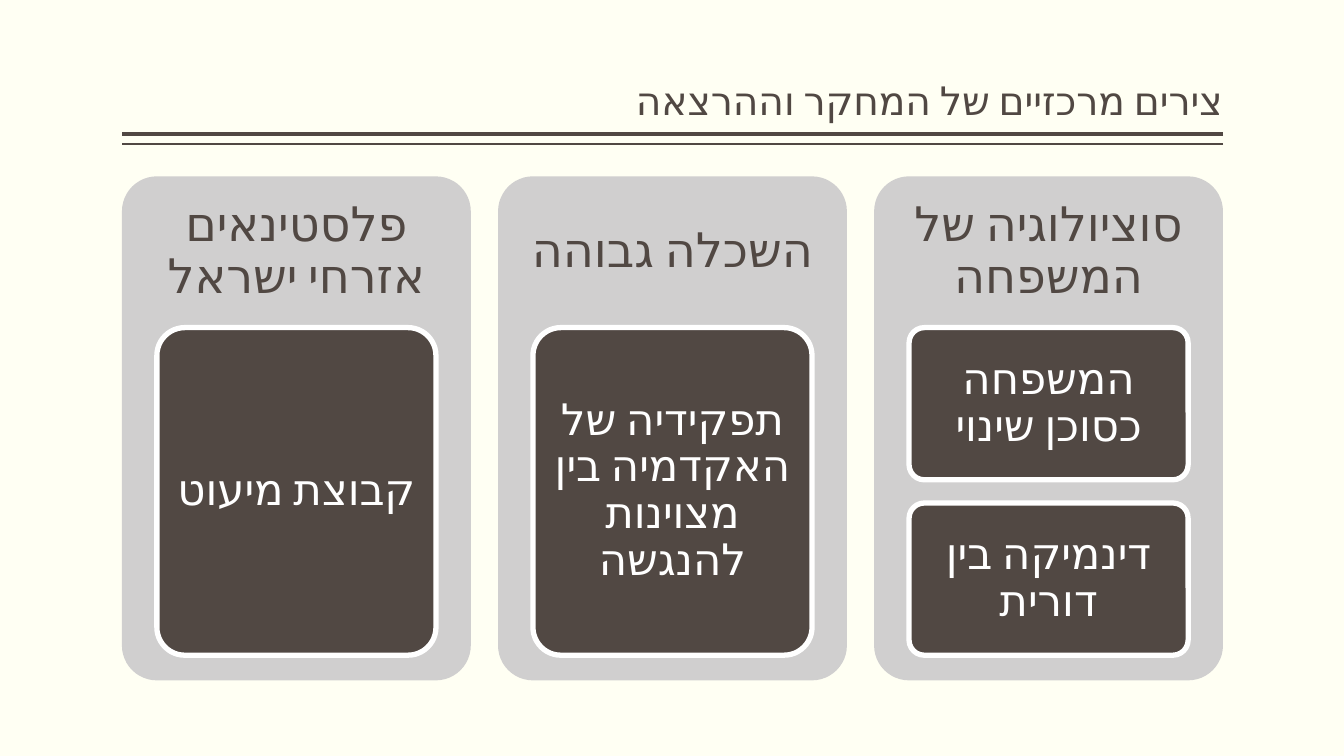
"""Build a slide with three right-to-left topic columns."""
from lxml.etree import SubElement
from pptx import Presentation
from pptx.dml.color import RGBColor
from pptx.enum.shapes import MSO_CONNECTOR, MSO_SHAPE
from pptx.enum.text import MSO_ANCHOR, MSO_AUTO_SIZE, PP_ALIGN
from pptx.oxml.ns import qn
from pptx.util import Inches, Pt

TITLE = "צירים מרכזיים של המחקר וההרצאה"
TOPICS = [
    ("סוציולוגיה של המשפחה", ["המשפחה כסוכן שינוי", "דינמיקה בין דורית"]),
    ("השכלה גבוהה", ["תפקידיה של האקדמיה בין מצוינות להנגשה"]),
    ("פלסטינאים אזרחי ישראל", ["קבוצת מיעוט"]),
]
RULES = [(1.33, 3), (1.43, 1)]

FONT = "Calibri"
CREAM = RGBColor(0xFF, 0xFF, 0xF3)
BROWN = RGBColor(0x51, 0x48, 0x43)
GREY = RGBColor(0xD0, 0xCF, 0xCF)
WHITE = RGBColor(0xFF, 0xFF, 0xFF)

WIDE, HIGH = 13.33, 7.5
LEFT, SPAN = 1.21, 10.92
TOP, TALL = 1.75, 5
GAP = 0.27
CARD = (SPAN - GAP * (len(TOPICS) - 1)) / len(TOPICS)
HEAD = TALL * 0.3
STACK = TALL * 0.65
SPACE = 0.23
BOX = CARD * 0.8


def write(shape, text, size, color, align, anchor, pad):
    """Fill a shape with one right-to-left paragraph."""
    frame = shape.text_frame
    frame.text = text
    frame.word_wrap = True
    frame.auto_size = MSO_AUTO_SIZE.NONE
    frame.vertical_anchor = anchor
    frame.margin_left = frame.margin_right = Inches(pad[0])
    frame.margin_top = frame.margin_bottom = Inches(pad[1])
    para = frame.paragraphs[0]
    para.alignment = align
    para.line_spacing = 0.9
    para._p.get_or_add_pPr().set("rtl", "1")
    run = para.runs[0]
    run.font.size = Pt(size)
    run.font.name = FONT
    run.font.color.rgb = color
    props = run._r.get_or_add_rPr()
    props.set("lang", "he-IL")
    SubElement(props, qn("a:cs")).set("typeface", FONT)


def panel(slide, x, y, w, h, fill):
    """Add a plain rounded rectangle."""
    shape = slide.shapes.add_shape(
        MSO_SHAPE.ROUNDED_RECTANGLE, Inches(x), Inches(y), Inches(w), Inches(h))
    shape.adjustments[0] = 0.1
    shape.shadow.inherit = False
    shape.fill.solid()
    shape.fill.fore_color.rgb = fill
    shape.line.fill.background()
    return shape


def column(slide, x, topic, items):
    """Add a card with its heading and stacked boxes."""
    panel(slide, x, TOP, CARD, TALL, GREY)
    head = slide.shapes.add_textbox(
        Inches(x), Inches(TOP), Inches(CARD), Inches(HEAD))
    write(head, topic, 34, BROWN, PP_ALIGN.CENTER, MSO_ANCHOR.MIDDLE, (0.14, 0.14))
    high = (STACK - SPACE * (len(items) - 1)) / len(items)
    for row, item in enumerate(items):
        y = TOP + HEAD + row * (high + SPACE)
        box = panel(slide, x + (CARD - BOX) / 2, y, BOX, high, BROWN)
        box.line.color.rgb = WHITE
        box.line.width = Pt(3.78)
        write(box, item, 31, WHITE, PP_ALIGN.CENTER, MSO_ANCHOR.MIDDLE, (0.09, 0.06))


def main():
    """Compose and save the slide."""
    deck = Presentation()
    deck.slide_width, deck.slide_height = Inches(WIDE), Inches(HIGH)
    slide = deck.slides.add_slide(deck.slide_layouts[5])
    slide.background.fill.solid()
    slide.background.fill.fore_color.rgb = CREAM

    title = slide.shapes.title
    title.left, title.top = Inches(LEFT), Inches(0.08)
    title.width, title.height = Inches(SPAN), Inches(1.2)
    write(title, TITLE, 28, BROWN, PP_ALIGN.RIGHT, MSO_ANCHOR.BOTTOM, (0, 0.05))

    for y, width in RULES:
        rule = slide.shapes.add_connector(
            MSO_CONNECTOR.STRAIGHT, Inches(LEFT + SPAN), Inches(y),
            Inches(LEFT), Inches(y))
        rule.line.color.rgb = BROWN
        rule.line.width = Pt(width)
        SubElement(rule._element.spPr, qn("a:effectLst"))

    for col, (topic, items) in enumerate(TOPICS):
        x = LEFT + SPAN - CARD - col * (CARD + GAP)
        column(slide, x, topic, items)

    deck.save("out.pptx")


if __name__ == "__main__":
    main()
